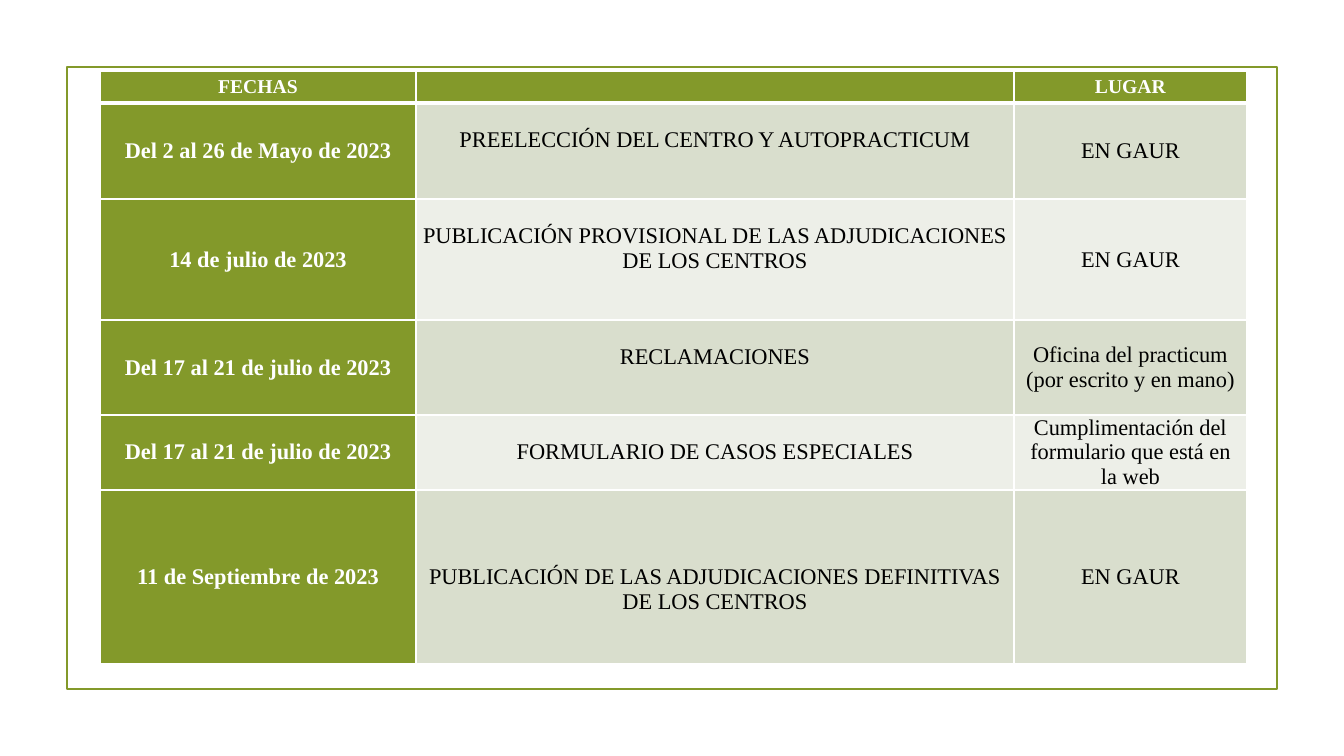
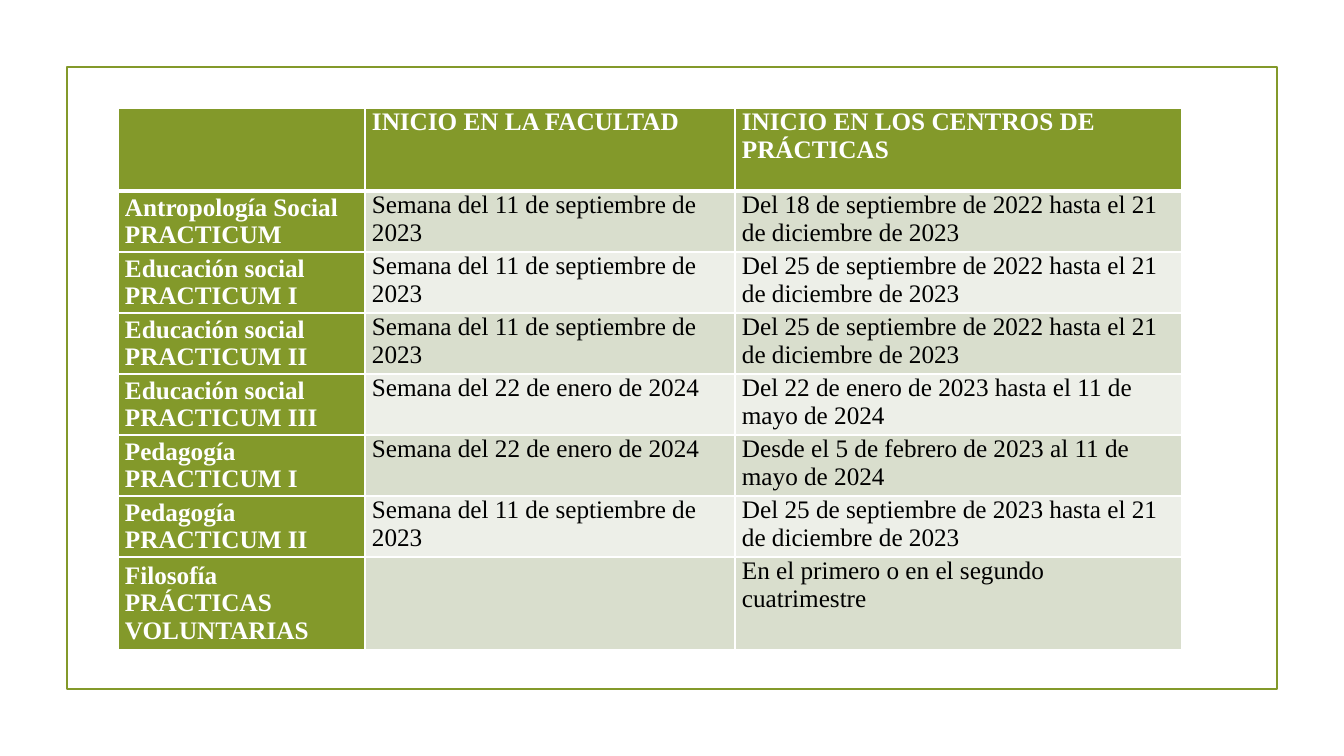
from lxml import etree
from pptx import Presentation
from pptx import util as u
from pptx.dml.color import RGBColor
from pptx.enum import shapes, text
from pptx.oxml.ns import qn

EMU_PER_PX = 914400 / 100.8
SLIDE_SIZE = (1344, 756)
FRAME = (67, 67, 1210, 622)
FONT = "Times New Roman"
GREEN = RGBColor(0x83, 0x99, 0x2A)
BAND_DARK = RGBColor(0xD9, 0xDE, 0xCD)
BAND_LIGHT = RGBColor(0xED, 0xEF, 0xE8)
WHITE = RGBColor(0xFF, 0xFF, 0xFF)
BLACK = RGBColor(0, 0, 0)

CALENDAR = [
    ("FECHAS", "", "LUGAR"),
    ("Del 2 al 26 de Mayo de 2023", "PREELECCIÓN DEL CENTRO Y AUTOPRACTICUM", "EN GAUR"),
    ("14 de julio de 2023", "PUBLICACIÓN PROVISIONAL DE LAS ADJUDICACIONES DE LOS CENTROS", "EN GAUR"),
    ("Del 17 al 21 de julio de 2023", "RECLAMACIONES", "Oficina del practicum\n(por escrito y en mano)"),
    ("Del 17 al 21 de julio de 2023", "FORMULARIO DE CASOS ESPECIALES",
     "Cumplimentación del formulario que está en la web"),
    ("11 de Septiembre de 2023", "PUBLICACIÓN DE LAS ADJUDICACIONES DEFINITIVAS DE LOS CENTROS", "EN GAUR"),
]
CALENDAR_TOP_MARGINS = [25, 25, 25, 25, 75]

SEPTEMBER = "Semana del 11 de septiembre de 2023"
JANUARY = "Semana del 22 de enero de 2024"
FROM_25_SEPTEMBER = "Del 25 de septiembre de 2022 hasta el 21 de diciembre de 2023"
STARTS = [
    ("", "INICIO EN LA FACULTAD", "INICIO EN LOS CENTROS DE PRÁCTICAS"),
    ("Antropología Social\vPRACTICUM", SEPTEMBER,
     "Del 18 de septiembre de 2022 hasta el 21 de diciembre de 2023"),
    ("Educación social\vPRACTICUM I", SEPTEMBER, FROM_25_SEPTEMBER),
    ("Educación social\vPRACTICUM II", SEPTEMBER, FROM_25_SEPTEMBER),
    ("Educación social\vPRACTICUM III", JANUARY, "Del 22 de enero de 2023 hasta el 11 de mayo de 2024"),
    ("Pedagogía\vPRACTICUM I", JANUARY, "Desde el 5 de febrero de 2023 al 11 de mayo de 2024"),
    ("Pedagogía\vPRACTICUM II", SEPTEMBER,
     "Del 25 de septiembre de 2023 hasta el 21 de diciembre de 2023"),
    ("Filosofía\nPRÁCTICAS VOLUNTARIAS", "", "En el primero o en el segundo cuatrimestre"),
]


def px(n):
    return u.Emu(round(n * EMU_PER_PX))


def add_layout_frame(s):
    sp = s.shapes.add_shape(shapes.MSO_SHAPE.RECTANGLE, *map(px, FRAME))
    sp.shadow.inherit = False
    sp.fill.background()
    sp.line.color.rgb = GREEN
    sp.line.width = u.Pt(1.25)
    s.slide_layout.shapes._spTree.append(sp._element)


def set_borders(cell, row):
    top = 3 if row == 1 else 1
    bottom = 3 if row == 0 else 1
    tcPr = cell._tc.get_or_add_tcPr()
    for i, (side, width) in enumerate((("L", 1), ("R", 1), ("T", top), ("B", bottom))):
        ln = etree.Element(qn(f"a:ln{side}"), w=str(u.Pt(width)))
        fill = etree.SubElement(ln, qn("a:solidFill"))
        etree.SubElement(fill, qn("a:srgbClr"), val=str(WHITE))
        tcPr.insert(i, ln)


def format_cell(cell, row, col, size, align):
    heading = row == 0 or col == 0
    cell.margin_left = cell.margin_right = px(7)
    cell.margin_top = cell.margin_bottom = 0
    cell.fill.solid()
    cell.fill.fore_color.rgb = GREEN if heading else BAND_DARK if row % 2 else BAND_LIGHT
    set_borders(cell, row)
    for p in cell.text_frame.paragraphs:
        p.alignment = align
        for r in p.runs:
            r.font.name = FONT
            r.font.size = u.Pt(size)
            r.font.bold = heading
            r.font.color.rgb = WHITE if heading else BLACK


def add_schedule(s, left, top, widths, heights, rows, header_size, body_size, align):
    box = (left, top, sum(widths), sum(heights))
    tbl = s.shapes.add_table(len(rows), len(widths), *map(px, box)).table
    for column, width in zip(tbl.columns, widths):
        column.width = px(width)
    for i, (values, height) in enumerate(zip(rows, heights)):
        tbl.rows[i].height = px(height)
        for j, value in enumerate(values):
            cell = tbl.cell(i, j)
            cell.text_frame.text = value
            format_cell(cell, i, j, body_size if i else header_size, align)
            if i and j == 0:
                cell.vertical_anchor = text.MSO_ANCHOR.MIDDLE
    return tbl


def add_calendar(s):
    tbl = add_schedule(s, 100, 71, [316, 598, 233], [32, 96, 121, 95, 75, 174],
                       CALENDAR, 14, 16, text.PP_ALIGN.CENTER)
    for i in range(len(CALENDAR)):
        tbl.cell(i, 2).vertical_anchor = text.MSO_ANCHOR.MIDDLE
    tbl.cell(0, 0).vertical_anchor = text.MSO_ANCHOR.MIDDLE
    for i, margin in enumerate(CALENDAR_TOP_MARGINS, 1):
        tbl.cell(i, 1).margin_top = px(margin)


def add_starts(s):
    add_schedule(s, 118, 108, [247, 370, 447], [83] + [61] * 6 + [93],
                 STARTS, 18, 18, text.PP_ALIGN.LEFT)


def main():
    prs = Presentation()
    prs.slide_width, prs.slide_height = map(px, SLIDE_SIZE)
    blank = prs.slide_layouts[6]
    calendar, starts = (prs.slides.add_slide(blank) for _ in range(2))
    add_layout_frame(calendar)
    add_calendar(calendar)
    add_starts(starts)
    prs.save("out.pptx")


if __name__ == "__main__":
    main()
